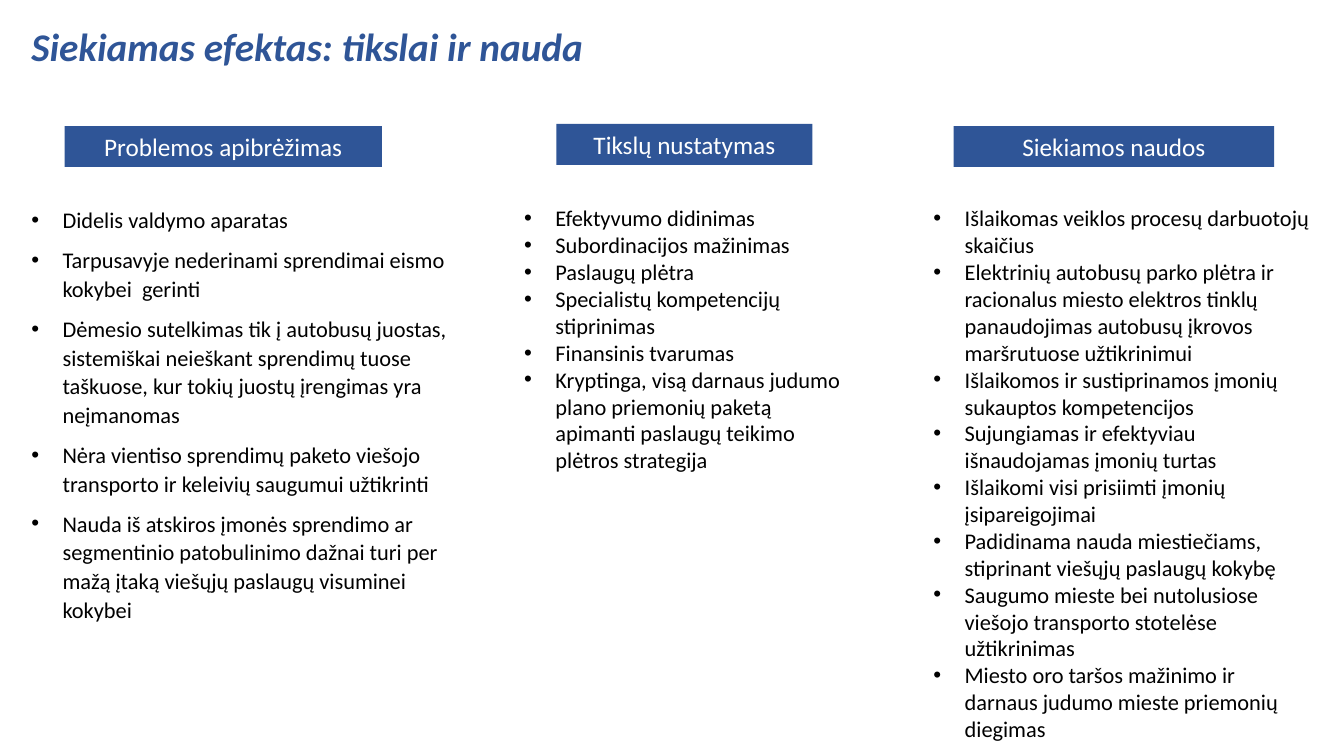
from lxml import etree
from pptx import Presentation, util as u
from pptx.dml import color
from pptx.enum import shapes, text
from pptx.oxml import ns

SLIDE_WIDTH, SLIDE_HEIGHT = u.Inches(13.33), u.Inches(7.5)
FONT = "Calibri"
BLUE, WHITE, BLACK = "2F5597", "FFFFFF", "000000"
HEADING_HEIGHT = 5.4

# Boxes are left, top, width, height in percent of the slide.
TITLE_BOX = (1.58, 2.27, 73.2, 7.6)
# Heading: offset from the column's left, rise above its top, width.
COLUMNS = [
    {
        "placeholder": 1,
        "box": (1.58, 26.4, 32.7, 62.4),
        "heading": (3.22, 9.73, 23.62),
        "title": "Problemos apibrėžimas",
        "spacing": (1.07, 8),
        "items": [
            "Didelis valdymo aparatas",
            "Tarpusavyje nederinami sprendimai eismo kokybei  gerinti",
            "Dėmesio sutelkimas tik į autobusų juostas, sistemiškai neieškant "
            "sprendimų tuose taškuose, kur tokių juostų įrengimas yra neįmanomas",
            "Nėra vientiso sprendimų paketo viešojo transporto ir keleivių "
            "saugumui užtikrinti",
            "Nauda iš atskiros įmonės sprendimo ar segmentinio patobulinimo "
            "dažnai turi per mažą įtaką viešųjų paslaugų visuminei kokybei",
        ],
    },
    {
        "placeholder": 2,
        "box": (38.25, 26.4, 25.28, 37.2),
        "heading": (3.15, 10, 19.05),
        "title": "Tikslų nustatymas",
        "spacing": (1.0, 0),
        "items": [
            "Efektyvumo didinimas",
            "Subordinacijos mažinimas",
            "Paslaugų plėtra",
            "Specialistų kompetencijų stiprinimas",
            "Finansinis tvarumas",
            "Kryptinga, visą darnaus judumo plano priemonių paketą apimanti "
            "paslaugų teikimo plėtros strategija",
        ],
    },
    {
        "placeholder": 4,
        "box": (68.7, 26.4, 29.48, 73.5),
        "heading": (2.25, 9.73, 23.85),
        "title": "Siekiamos naudos",
        "spacing": (1.0, 0),
        "items": [
            "Išlaikomas veiklos procesų darbuotojų skaičius",
            "Elektrinių autobusų parko plėtra ir racionalus miesto elektros "
            "tinklų panaudojimas autobusų įkrovos maršrutuose užtikrinimui",
            "Išlaikomos ir sustiprinamos įmonių sukauptos kompetencijos",
            "Sujungiamas ir efektyviau išnaudojamas įmonių turtas",
            "Išlaikomi visi prisiimti įmonių įsipareigojimai",
            "Padidinama nauda miestiečiams, stiprinant viešųjų paslaugų kokybę",
            "Saugumo mieste bei nutolusiose viešojo transporto stotelėse "
            "užtikrinimas",
            "Miesto oro taršos mažinimo ir darnaus judumo mieste priemonių "
            "diegimas",
        ],
    },
]


def rgb(value):
    return color.RGBColor.from_string(value)


def to_lengths(box):
    left, top, width, height = box
    return (
        int(SLIDE_WIDTH * left / 100),
        int(SLIDE_HEIGHT * top / 100),
        int(SLIDE_WIDTH * width / 100),
        int(SLIDE_HEIGHT * height / 100),
    )


def place(shape, box):
    shape.left, shape.top, shape.width, shape.height = to_lengths(box)


def prepare_frame(shape, anchor):
    frame = shape.text_frame
    frame.word_wrap = True
    frame.auto_size = text.MSO_AUTO_SIZE.NONE
    frame.vertical_anchor = anchor
    return frame


def add_run(paragraph, words, size, colour, bold=False, italic=False):
    run = paragraph.add_run()
    run.text = words
    font = run.font
    font.name, font.size = FONT, u.Pt(size)
    font.bold, font.italic = bold, italic
    font.color.rgb = rgb(colour)


def add_bullet(paragraph):
    properties = paragraph._p.get_or_add_pPr()
    indent = u.Inches(0.31)
    properties.set("marL", str(indent))
    properties.set("indent", str(-indent))
    etree.SubElement(properties, ns.qn("a:buFont"), typeface="Arial")
    etree.SubElement(properties, ns.qn("a:buChar"), char="•")


def fill_title(shape):
    place(shape, TITLE_BOX)
    frame = prepare_frame(shape, text.MSO_ANCHOR.TOP)
    paragraph = frame.paragraphs[0]
    paragraph.alignment = text.PP_ALIGN.LEFT
    add_run(paragraph, "Siekiamas efektas: tikslai ir nauda", 28, BLUE, True, True)


def add_heading(slide, box, words):
    shape = slide.shapes.add_shape(shapes.MSO_SHAPE.RECTANGLE, *to_lengths(box))
    shape.shadow.inherit = False
    shape.fill.solid()
    shape.fill.fore_color.rgb = rgb(BLUE)
    shape.line.fill.background()
    frame = prepare_frame(shape, text.MSO_ANCHOR.TOP)
    paragraph = frame.paragraphs[0]
    paragraph.alignment = text.PP_ALIGN.CENTER
    add_run(paragraph, words, 18, WHITE)


def fill_list(shape, box, items, spacing):
    place(shape, box)
    frame = prepare_frame(shape, text.MSO_ANCHOR.TOP)
    for index, item in enumerate(items):
        paragraph = frame.add_paragraph() if index else frame.paragraphs[0]
        add_bullet(paragraph)
        paragraph.alignment = text.PP_ALIGN.LEFT
        paragraph.space_before = u.Pt(0)
        paragraph.line_spacing = spacing[0]
        paragraph.space_after = u.Pt(spacing[1])
        add_run(paragraph, item, 16, BLACK)


def add_column(slide, placeholder, column):
    left, top, _, _ = column["box"]
    offset, rise, width = column["heading"]
    heading_box = (left + offset, top - rise, width, HEADING_HEIGHT)
    add_heading(slide, heading_box, column["title"])
    fill_list(placeholder, column["box"], column["items"], column["spacing"])


def main():
    presentation = Presentation()
    presentation.slide_width = SLIDE_WIDTH
    presentation.slide_height = SLIDE_HEIGHT
    comparison_layout = presentation.slide_layouts[4]
    slide = presentation.slides.add_slide(comparison_layout)
    placeholders = {
        shape.placeholder_format.idx: shape for shape in slide.placeholders
    }
    fill_title(slide.shapes.title)
    for column in COLUMNS:
        add_column(slide, placeholders[column["placeholder"]], column)
    unused = placeholders[3].element
    unused.getparent().remove(unused)
    presentation.save("out.pptx")


if __name__ == "__main__":
    main()
